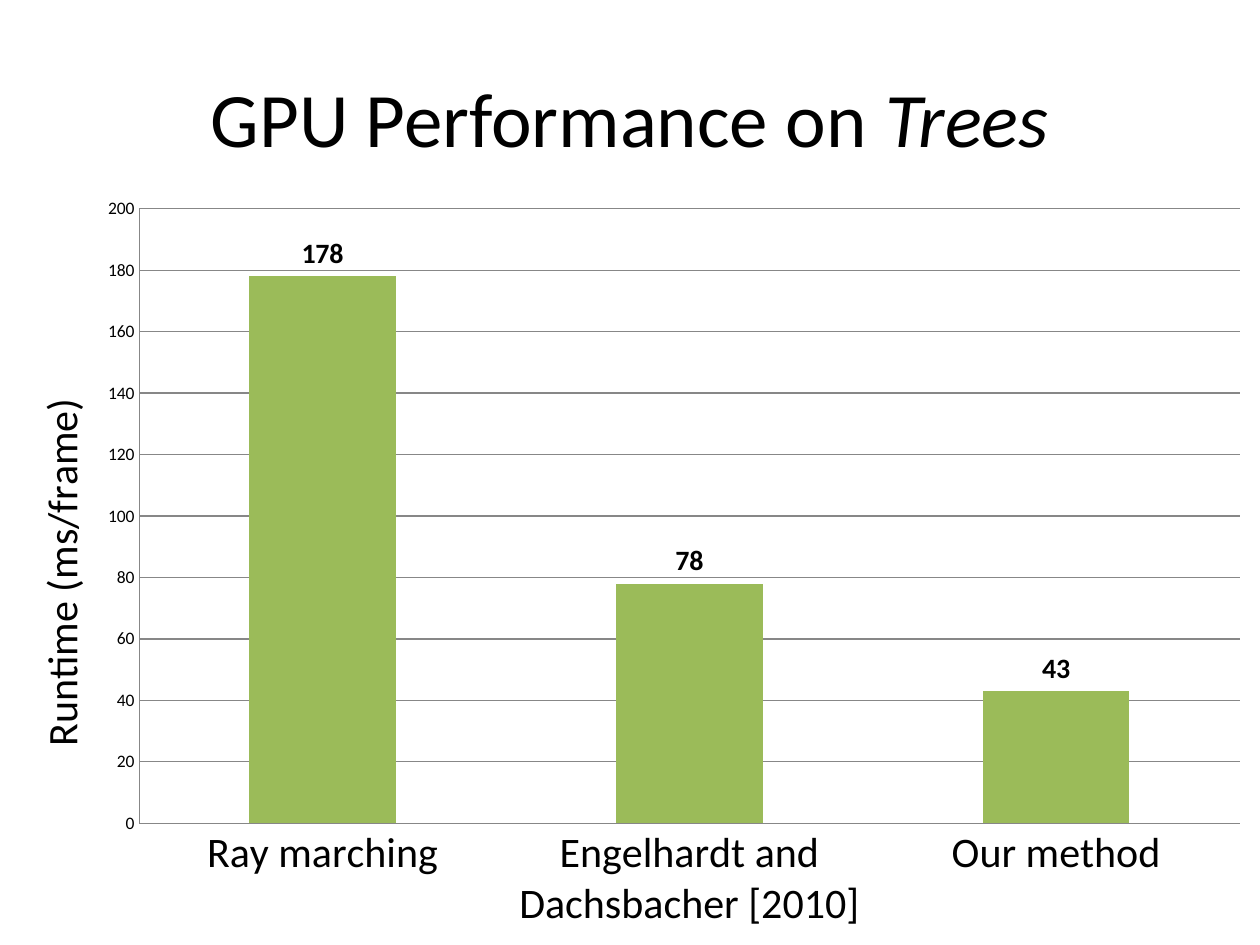
import pptx
import pptx.util
import pptx.dml.color
import pptx.chart.data
import pptx.enum.chart
import pptx.enum.text
import pptx.oxml

SCALE = 914400 // 126
INK, GREEN, GRAY = "000000", "9BBB59", "878787"
NS = "http://schemas.openxmlformats.org/drawingml/2006/chart"


def px(n):
    return pptx.util.Emu(n * SCALE)


def tint(color, code):
    color.rgb = pptx.dml.color.RGBColor.from_string(code)


def style(font, size, **extra):
    look = {"name": "Calibri", "size": pptx.util.Pt(size), "bold": False, **extra}
    for key, value in look.items():
        setattr(font, key, value)
    tint(font.color, INK)


def rule(line):
    tint(line.color, GRAY)
    line.width = pptx.util.Pt(0.75)


def lay(owner, index, target, **spots):
    for old in owner.findall(f"{{{NS}}}layout"):
        owner.remove(old)
    bits = [f'<c:layoutTarget val="{target}"/>'] if target else []
    bits += [f'<c:{key}Mode val="edge"/>' for key in "xy"]
    bits += [f'<c:{key} val="{value}"/>' for key, value in spots.items()]
    xml = f'<c:layout xmlns:c="{NS}"><c:manualLayout>{"".join(bits)}</c:manualLayout></c:layout>'
    owner.insert(index, pptx.oxml.parse_xml(xml))


def head(slide, box):
    frame = slide.shapes.add_textbox(*map(px, box)).text_frame
    frame.word_wrap = True
    frame.vertical_anchor = pptx.enum.text.MSO_ANCHOR.MIDDLE
    para = frame.paragraphs[0]
    para.alignment = pptx.enum.text.PP_ALIGN.CENTER
    for text, slant in (("GPU Performance on ", False), ("Trees", True)):
        run = para.add_run()
        run.text = text
        style(run.font, 44, italic=slant)


def graph(slide, box):
    kinds = pptx.enum.chart
    data = pptx.chart.data.CategoryChartData()
    data.categories = ["Ray marching", "Engelhardt and Dachsbacher [2010]", "Our method"]
    data.add_series("Series 1", (178, 78, 43))
    kind = kinds.XL_CHART_TYPE.COLUMN_CLUSTERED
    chart = slide.shapes.add_chart(kind, *map(px, box), data).chart
    chart.has_legend = chart.has_title = False
    style(chart.font, 10)

    plot = chart.plots[0]
    plot.gap_width = 150
    plot.vary_by_categories = False
    bars = plot.series[0]
    bars.format.fill.solid()
    tint(bars.format.fill.fore_color, GREEN)
    labels = bars.data_labels
    labels.show_value = True
    labels.position = kinds.XL_LABEL_POSITION.OUTSIDE_END
    style(labels.font, 16, bold=True)

    cats, vals = chart.category_axis, chart.value_axis
    for axis, size in ((cats, 24), (vals, 10)):
        axis.major_tick_mark = axis.minor_tick_mark = kinds.XL_TICK_MARK.NONE
        rule(axis.format.line)
        style(axis.tick_labels.font, size)
    for key, value in {"minimum_scale": 0, "maximum_scale": 200, "major_unit": 20}.items():
        setattr(vals, key, value)
    vals.has_major_gridlines = True
    rule(vals.major_gridlines.format.line)

    frame = vals.axis_title.text_frame
    run = frame.paragraphs[0].add_run()
    run.text = "Runtime (ms/frame)"
    style(run.font, 24)

    root = chart.element
    title = root.xpath(".//c:valAx/c:title")[0]
    turn = title.xpath(".//a:bodyPr")[0]
    turn.set("rot", "-5400000")
    turn.set("vert", "horz")
    lay(title, 1, None, x=0.02, y=0.27)
    lay(root.xpath(".//c:plotArea")[0], 0, "inner", x=0.11, y=0.03, w=0.87, h=0.81)


def main():
    deck = pptx.Presentation()
    deck.slide_width, deck.slide_height = px(1260), px(945)
    slide = deck.slides.add_slide(deck.slide_layouts[6])
    head(slide, (63, 38, 1134, 157))
    graph(slide, (0, 186, 1265, 759))
    deck.save("out.pptx")


if __name__ == "__main__":
    main()
